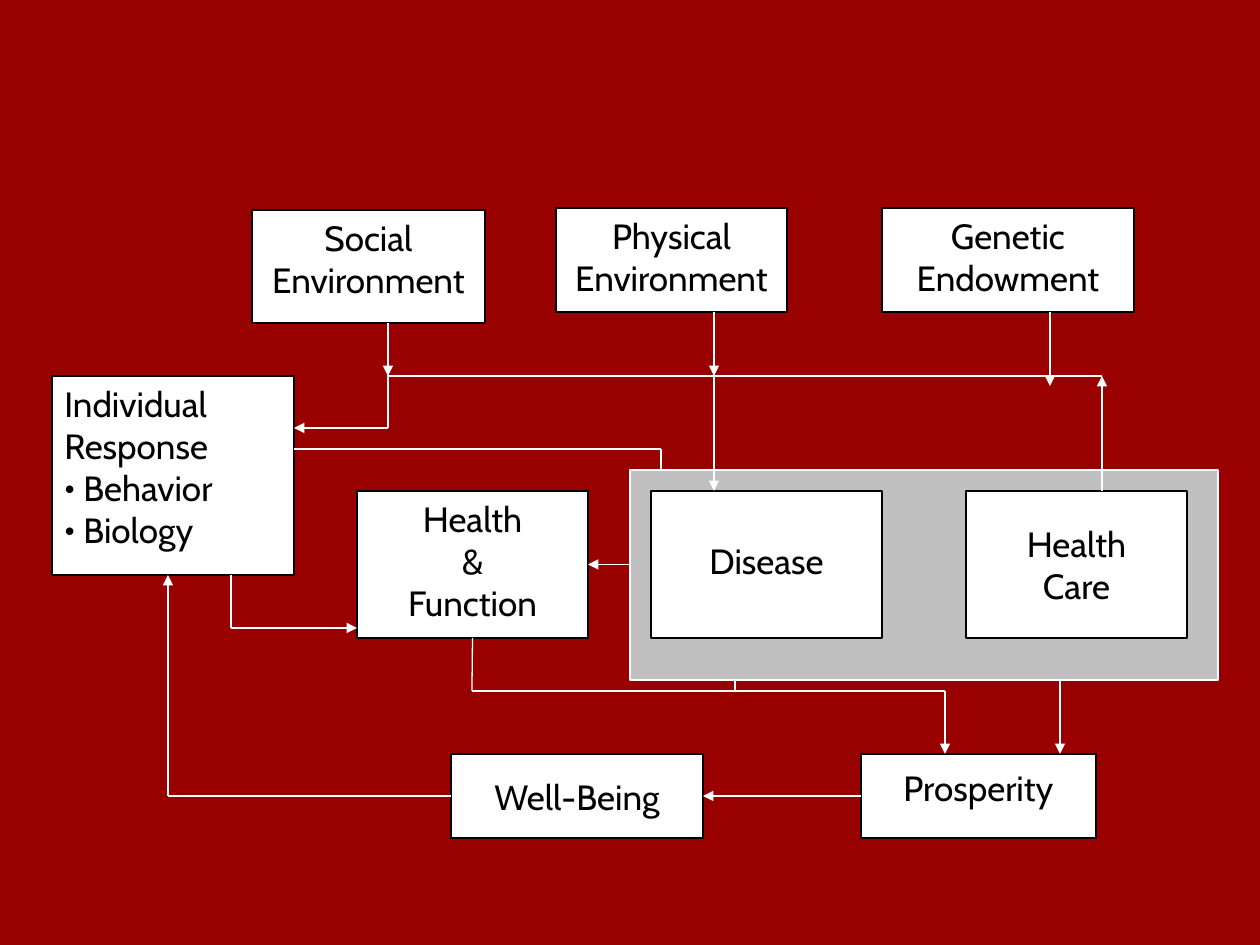
import pptx
import pptx.util
import pptx.dml.color
import pptx.enum.shapes
import pptx.enum.text
import pptx.oxml.ns
from lxml import etree

RGB = pptx.dml.color.RGBColor
RED = RGB(0x99, 0x00, 0x00)
WHITE = RGB(0xFF, 0xFF, 0xFF)
BLACK = RGB(0x00, 0x00, 0x00)
GRAY = RGB(0xC0, 0xC0, 0xC0)
FONT = "Cabin"
PX = 914400 / 126  # EMU in one px

ALIGN = pptx.enum.text.PP_ALIGN
ANCHOR = pptx.enum.text.MSO_ANCHOR
TOP, LEFT, BOTTOM, RIGHT = range(4)  # sides of a box


def px(size):
    return pptx.util.Emu(round(size * PX))


def add_tag(node, name, **attrs):
    return etree.SubElement(node, pptx.oxml.ns.qn(name), attrs)


def add_box(slide, left, top, width, height, fill=WHITE, line=BLACK):
    kind = pptx.enum.shapes.MSO_SHAPE.RECTANGLE
    box = slide.shapes.add_shape(kind, px(left), px(top), px(width), px(height))
    box.shadow.inherit = False
    box.fill.solid()
    box.fill.fore_color.rgb = fill
    box.line.color.rgb = line
    box.line.width = pptx.util.Pt(0.75)
    return box


def set_text(box, text, align=ALIGN.CENTER, anchor=ANCHOR.TOP):
    frame = box.text_frame
    frame.word_wrap = True
    frame.vertical_anchor = anchor
    frame.text = text
    for para in frame.paragraphs:
        para.alignment = align
        for run in para.runs:
            run.font.name = FONT
            run.font.size = pptx.util.Pt(20)
            run.font.color.rgb = BLACK


def add_bullet(para):
    props = para._p.get_or_add_pPr()
    indent = px(19)
    props.set("marL", str(indent))
    props.set("indent", str(-indent))
    add_tag(props, "a:buFont", typeface=FONT)
    add_tag(props, "a:buChar", char="•")


def add_wire(slide, start, end, arrow=True):
    kind = pptx.enum.shapes.MSO_CONNECTOR.STRAIGHT
    wire = slide.shapes.add_connector(kind, *map(px, start + end))
    wire.line.color.rgb = WHITE
    wire.line.width = pptx.util.Pt(0.75)
    if arrow:
        add_tag(wire.line._get_or_add_ln(), "a:tailEnd", type="triangle")
    add_tag(wire._element.spPr, "a:effectLst")
    return wire


def add_route(slide, *points, arrow=True):
    """Join the points in turn, with an arrowhead on the last leg."""
    last = len(points) - 2
    return [add_wire(slide, points[i], points[i + 1], arrow and i == last)
            for i in range(last + 1)]


def main():
    deck = pptx.Presentation()
    deck.slide_width, deck.slide_height = px(1260), px(945)
    slide = deck.slides.add_slide(deck.slide_layouts[6])
    slide.background.fill.solid()
    slide.background.fill.fore_color.rgb = RED

    # Causes
    set_text(add_box(slide, 252, 210, 233, 113), "Social\nEnvironment")
    set_text(add_box(slide, 556, 208, 231, 104), "Physical\nEnvironment")
    set_text(add_box(slide, 882, 208, 252, 104), "Genetic\nEndowment")

    # Individual response
    person = add_box(slide, 52, 376, 242, 199)
    set_text(person, "Individual\nResponse\nBehavior\nBiology", ALIGN.LEFT)
    for para in person.text_frame.paragraphs[2:]:
        add_bullet(para)

    # Outcomes
    health = add_box(slide, 357, 491, 231, 147)
    set_text(health, "Health\n&\nFunction")
    being = add_box(slide, 451, 754, 252, 84)
    set_text(being, "Well-Being", anchor=ANCHOR.MIDDLE)
    wealth = add_box(slide, 861, 754, 235, 84)
    set_text(wealth, "Prosperity", anchor=ANCHOR.MIDDLE)
    wealth.text_frame.margin_bottom = px(24)

    # Causes feed the shared bar, which leads to the individual
    add_route(slide, (388, 323), (388, 376))
    add_route(slide, (714, 312), (714, 376))
    add_route(slide, (1050, 312), (1050, 386))
    add_route(slide, (388, 376), (1102, 376), arrow=False)
    add_route(slide, (388, 355), (388, 428), (294, 428))

    # Individual to disease and to health
    add_route(slide, (294, 449), (661, 449), (661, 491))
    add_route(slide, (231, 575), (231, 628), (357, 628))

    # Health and disease to prosperity
    legs = add_route(slide, (472, 638), (472, 691), (945, 691), (945, 754))
    legs[0].begin_connect(health, BOTTOM)
    add_route(slide, (735, 691), (735, 638))
    add_route(slide, (1060, 638), (1060, 754))

    # Prosperity to well-being and back to the individual
    wire = add_wire(slide, (861, 796), (703, 796))
    wire.begin_connect(wealth, LEFT)
    wire.end_connect(being, RIGHT)
    legs = add_route(slide, (451, 796), (168, 796), (168, 575))
    legs[0].begin_connect(being, LEFT)
    cure = add_wire(slide, (651, 565), (588, 565))
    cure.end_connect(health, RIGHT)

    # Disease and care on their panel
    add_box(slide, 630, 470, 588, 210, GRAY, WHITE)
    ill = add_box(slide, 651, 491, 231, 147)
    set_text(ill, "Disease")
    ill.text_frame.margin_top = px(48)
    cure.begin_connect(ill, LEFT)
    care = add_box(slide, 966, 491, 221, 147)
    set_text(care, "Health\nCare", anchor=ANCHOR.MIDDLE)
    add_route(slide, (714, 365), (714, 491))
    add_route(slide, (1102, 491), (1102, 376))

    deck.save("out.pptx")


if __name__ == "__main__":
    main()
